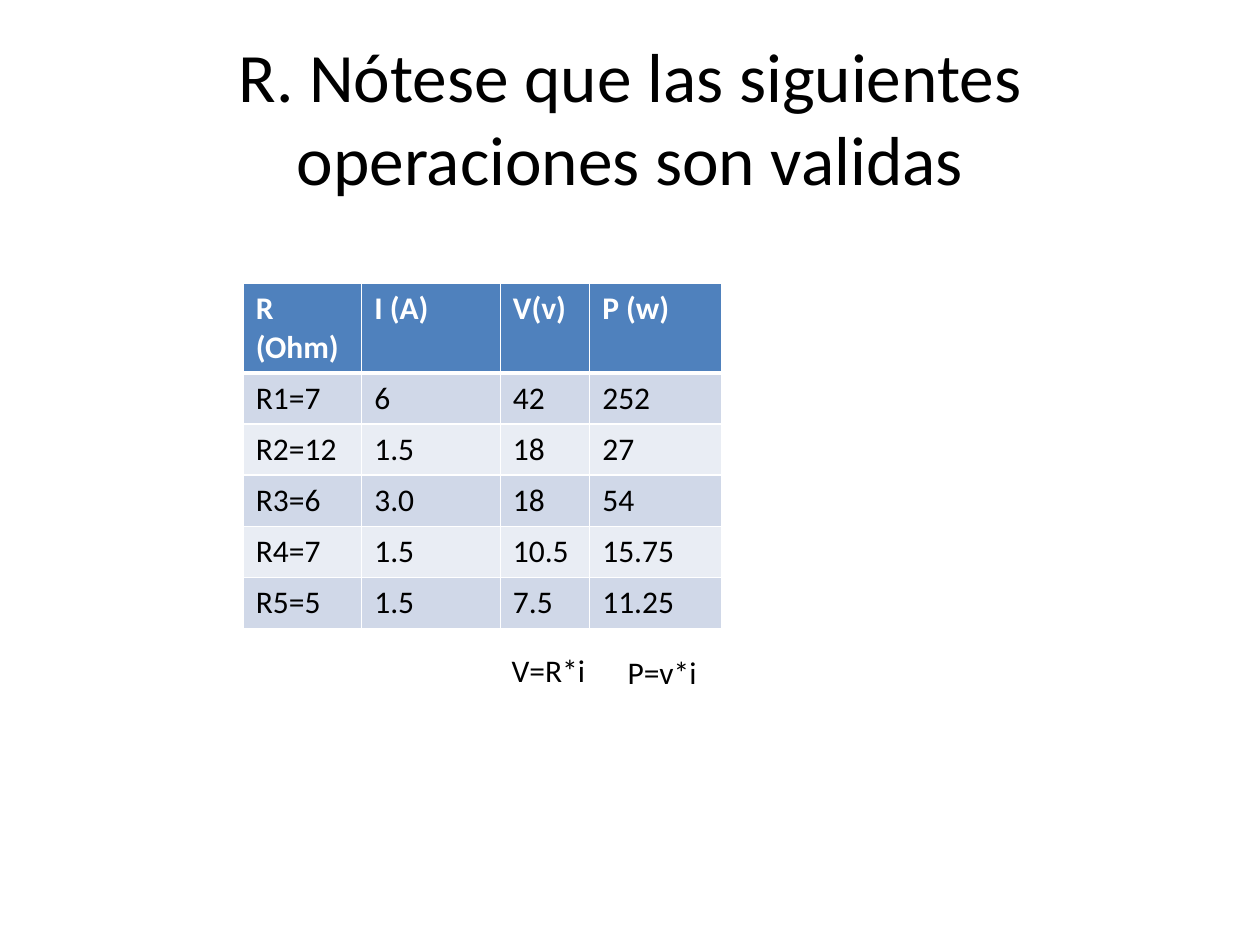
from pptx import Presentation
from pptx.dml.color import RGBColor
from pptx.enum.text import MSO_ANCHOR, MSO_AUTO_SIZE, PP_ALIGN
from pptx.oxml.ns import qn
from pptx.util import Pt
from lxml.etree import SubElement

BLACK = RGBColor(0x00, 0x00, 0x00)
WHITE = RGBColor(0xFF, 0xFF, 0xFF)
BLUE = RGBColor(0x4F, 0x81, 0xBD)
BANDS = [RGBColor(0xE9, 0xED, 0xF4), RGBColor(0xD0, 0xD8, 0xE8)]

TITLE = "R. Nótese que las siguientes operaciones son validas"
ROWS = [
    ("R (Ohm)", "I (A)", "V(v)", "P (w)"),
    ("R1=7", "6", "42", "252"),
    ("R2=12", "1.5", "18", "27"),
    ("R3=6", "3.0", "18", "54"),
    ("R4=7", "1.5", "10.5", "15.75"),
    ("R5=5", "1.5", "7.5", "11.25"),
]
COL_WIDTHS = [67.7, 79.2, 51.1, 75.6]
ROW_HEIGHT = 29.2
TABLE_LEFT, TABLE_TOP = 139, 162
FORMULAS = [("V=R*i", 292.3, 372.2, 42.5), ("P=v*i", 358.6, 373, 39.6)]


def write(tf, text, size=18, color=BLACK, bold=False, align=PP_ALIGN.LEFT):
    p = tf.paragraphs[0]
    p.alignment = align
    r = p.add_run()
    r.text = text
    r.font.name = "Calibri"
    r.font.size = Pt(size)
    r.font.bold = bold
    r.font.color.rgb = color


def set_borders(cell, bottom):
    tcPr = cell._tc.get_or_add_tcPr()
    for i, (side, width) in enumerate((("L", 1), ("R", 1), ("T", 1), ("B", bottom))):
        ln = tcPr.makeelement(qn(f"a:ln{side}"), {"w": str(Pt(width))})
        fill = SubElement(ln, qn("a:solidFill"))
        SubElement(fill, qn("a:srgbClr"), val=str(WHITE))
        tcPr.insert(i, ln)


prs = Presentation()
prs.slide_width, prs.slide_height = Pt(720), Pt(540)
s = prs.slides.add_slide(prs.slide_layouts[5])

title = s.shapes.title
title.left, title.top, title.width, title.height = Pt(36), Pt(21.6), Pt(648), Pt(90)
title.text_frame.vertical_anchor = MSO_ANCHOR.MIDDLE
write(title.text_frame, TITLE, size=39.6, align=PP_ALIGN.CENTER)

table = s.shapes.add_table(
    len(ROWS), len(COL_WIDTHS), Pt(TABLE_LEFT), Pt(TABLE_TOP),
    Pt(sum(COL_WIDTHS)), Pt(ROW_HEIGHT * len(ROWS))).table
for col, width in zip(table.columns, COL_WIDTHS):
    col.width = Pt(width)
for i, values in enumerate(ROWS):
    header = i == 0
    table.rows[i].height = Pt(ROW_HEIGHT)
    for j, value in enumerate(values):
        cell = table.cell(i, j)
        cell.fill.solid()
        cell.fill.fore_color.rgb = BLUE if header else BANDS[i % 2]
        write(cell.text_frame, value, color=WHITE if header else BLACK, bold=header)
        set_borders(cell, 3 if header else 1)

for text, left, top, width in FORMULAS:
    tf = s.shapes.add_textbox(Pt(left), Pt(top), Pt(width), Pt(21.6)).text_frame
    tf.margin_left = tf.margin_top = tf.margin_right = tf.margin_bottom = 0
    tf.word_wrap = False
    tf.auto_size = MSO_AUTO_SIZE.SHAPE_TO_FIT_TEXT
    write(tf, text)

prs.save("out.pptx")
